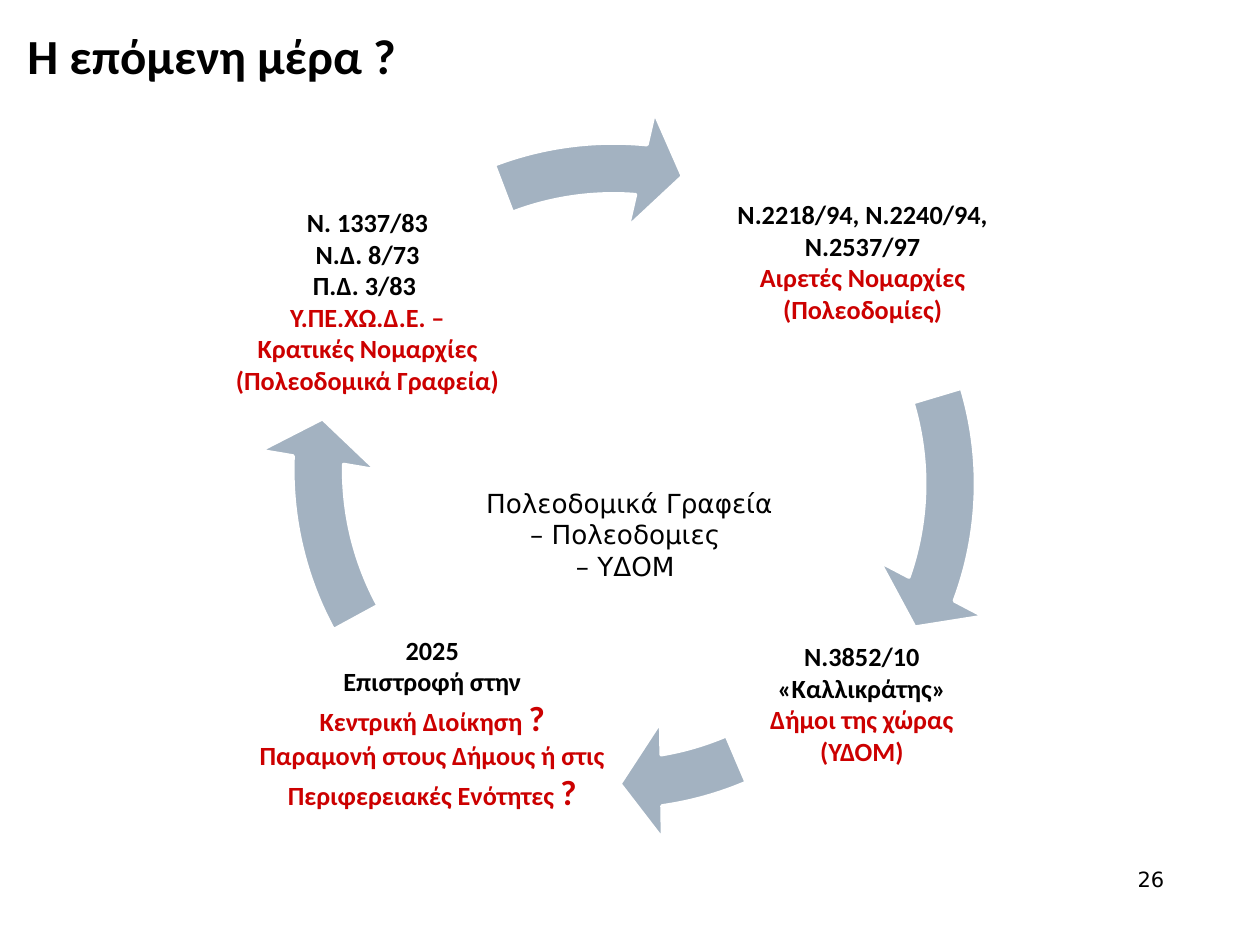
from pptx import Presentation
from pptx.dml.color import RGBColor
from pptx.enum.shapes import MSO_SHAPE
from pptx.enum.text import MSO_ANCHOR, MSO_AUTO_SIZE, PP_ALIGN
from pptx.util import Cm, Pt

BLACK = RGBColor(0x00, 0x00, 0x00)
WHITE = RGBColor(0xFF, 0xFF, 0xFF)
RED = RGBColor(0xCC, 0x00, 0x00)
STEEL = RGBColor(0xA3, 0xB2, 0xC1)


class Deck:
    head = "Calibri"
    plain = "DejaVu Sans"
    ring = 14.83

    def __init__(self):
        self.prs = Presentation()
        self.prs.slide_width = Cm(25.4)
        self.prs.slide_height = Cm(19.05)
        self.slide = self.prs.slides.add_slide(self.prs.slide_layouts[5])

    def style(self, para, size, name, bold=False, color=BLACK, align=PP_ALIGN.CENTER):
        para.alignment = align
        font = para.font
        font.size, font.name, font.bold = Pt(size), name, bold
        font.color.rgb = color

    def title(self, text, left, top, width, height):
        box = self.slide.shapes.title
        box.left, box.top, box.width, box.height = map(Cm, (left, top, width, height))
        frame = box.text_frame
        frame.text = text
        frame.auto_size = MSO_AUTO_SIZE.NONE
        frame.vertical_anchor = MSO_ANCHOR.TOP
        self.style(frame.paragraphs[0], 28, self.head, True, align=PP_ALIGN.LEFT)

    def box(self, left, top, width, height, anchor=MSO_ANCHOR.MIDDLE):
        frame = self.slide.shapes.add_textbox(*map(Cm, (left, top, width, height))).text_frame
        frame.word_wrap = True
        frame.vertical_anchor = anchor
        return frame

    def note(self, lines, place, size=15, align=PP_ALIGN.CENTER, anchor=MSO_ANCHOR.MIDDLE):
        frame = self.box(*place, anchor)
        frame.text = "\n".join(lines)
        for para in frame.paragraphs:
            self.style(para, size, self.plain, align=align)

    def stage(self, laws, bodies, place):
        """Black law lines, then red lines; a closing ? is set larger."""
        frame = self.box(*place)
        frame.margin_left = frame.margin_right = Cm(0.05)
        frame.margin_top = frame.margin_bottom = Cm(0.05)
        lines = [(t, BLACK) for t in laws] + [(t, RED) for t in bodies]
        frame.text = "\n".join(text.rstrip("?") for text, _ in lines)
        for para, (text, color) in zip(frame.paragraphs, lines):
            self.style(para, 15, self.head, True, color)
            if text.endswith("?"):
                mark = para.add_run()
                mark.text = "?"
                mark.font.size = Pt(20)

    def arrow(self, left, top, end, start):
        shape = self.slide.shapes.add_shape(
            MSO_SHAPE.CIRCULAR_ARROW, Cm(left), Cm(top), Cm(self.ring), Cm(self.ring))
        for i, value in enumerate((0.069, 4.651, end, start, 0.08)):
            shape.adjustments[i] = value
        shape.shadow.inherit = False
        shape.fill.solid()
        shape.fill.fore_color.rgb = STEEL
        shape.line.color.rgb = WHITE
        shape.line.width = Pt(2)


def main():
    deck = Deck()

    # Title and page number
    deck.title("Η επόμενη μέρα ?", 0.3, 0.38, 22.1, 1.14)
    deck.note(["26"], (18.21, 17.35, 5.51, 1.32), 12, PP_ALIGN.RIGHT, MSO_ANCHOR.TOP)

    # Cycle: each stage with the arrow that leaves it or leads on
    deck.stage(["Ν.2218/94, Ν.2240/94,", "Ν.2537/97"],
               ["Αιρετές Νομαρχίες", "(Πολεοδομίες)"],
               (13.77, 2.62, 7.24, 5.31))
    deck.arrow(5.51, 2.34, 11.935, 206.02)
    deck.stage(["Ν.3852/10", "«Καλλικράτης»"],
               ["Δήμοι της χώρας", "(ΥΔΟΜ)"],
               (15.09, 12.65, 4.57, 3.07))
    deck.arrow(4.98, 2.16, 48.776, 40.107)
    deck.stage(["2025", "Επιστροφή στην"],
               ["Κεντρική Διοίκηση ?",
                "Παραμονή στους Δήμους ή στις Περιφερειακές Ενότητες ?"],
               (4.7, 12.47, 8.03, 4.22))
    deck.arrow(5.23, 2.06, 109.081, 90.867)
    deck.stage(["Ν. 1337/83", "Ν.Δ. 8/73", "Π.Δ. 3/83 "],
               ["Υ.ΠΕ.ΧΩ.Δ.Ε. –", "Κρατικές Νομαρχίες", "(Πολεοδομικά Γραφεία)"],
               (2.84, 3.73, 9.14, 4.67))
    deck.arrow(4.95, 2.21, 165.109, 149.494)

    # Centre of the cycle
    deck.note(["Πολεοδομικά Γραφεία", "– Πολεοδομιες ", "– ΥΔΟΜ "],
              (8.56, 9.93, 8.26, 1.68))

    deck.prs.save("out.pptx")


if __name__ == "__main__":
    main()
